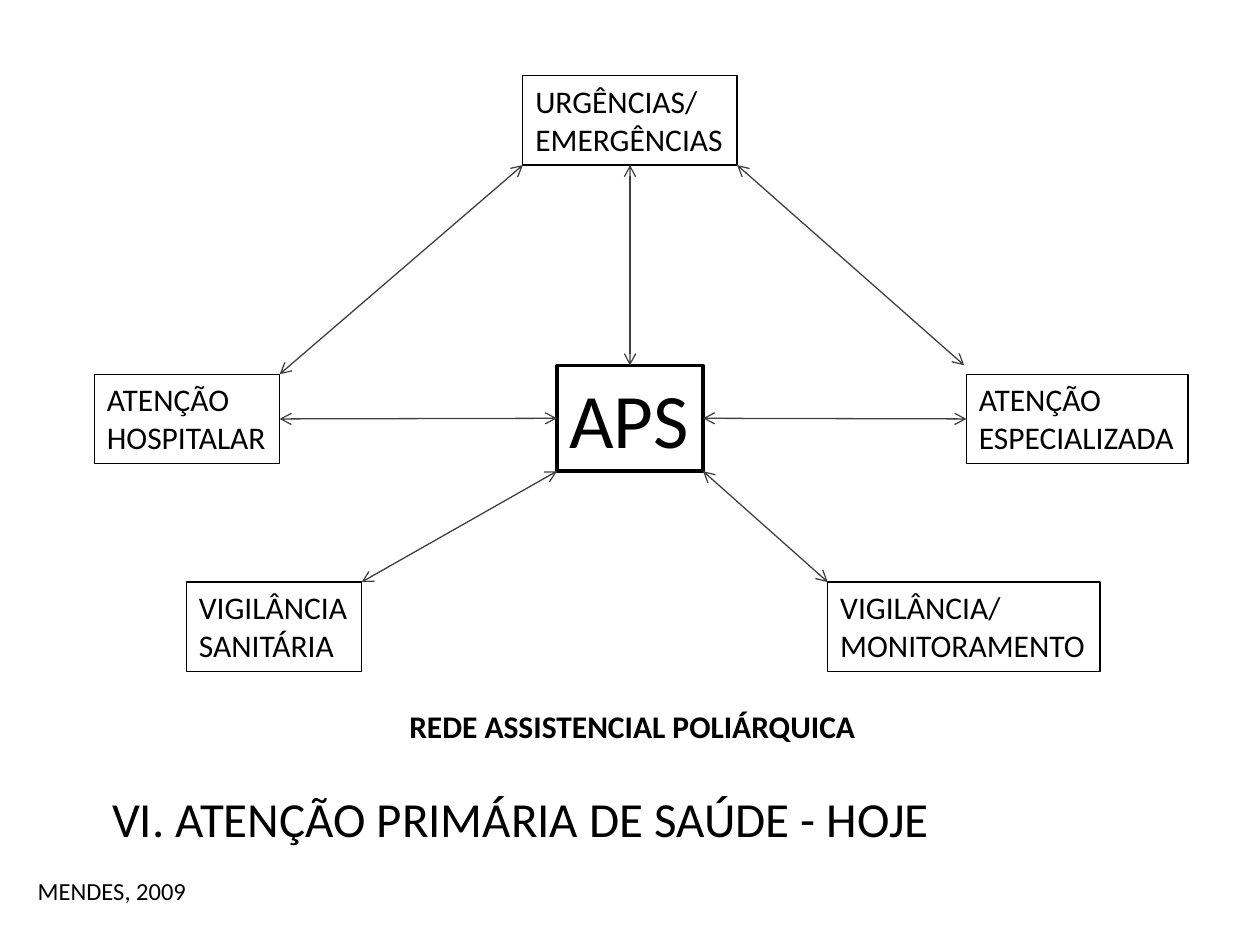
from dataclasses import dataclass

from lxml.etree import SubElement
from pptx import Presentation
from pptx.dml.color import RGBColor
from pptx.enum.shapes import MSO_CONNECTOR
from pptx.enum.text import MSO_ANCHOR, MSO_AUTO_SIZE, PP_ALIGN
from pptx.oxml.ns import qn
from pptx.util import Inches, Pt

COLS, ROWS = 100, 75


@dataclass(frozen=True)
class Theme:
    font: str = "Calibri"
    ink: RGBColor = RGBColor(0, 0, 0)
    paper: RGBColor = RGBColor(255, 255, 255)
    arrow: RGBColor = RGBColor(0x40, 0x40, 0x40)
    hub: int = 44
    title: int = 28
    body: int = 18
    source: int = 14
    thin: float = 0.75
    thick: float = 2


THEME = Theme()
SERVICE_H = 7.1
SIDE_ROW, WATCH_ROW = 29.7, 46.2

SERVICES = {
    "urgencias": ("URGÊNCIAS/\nEMERGÊNCIAS", 41.5, 6, 17),
    "hospitalar": ("ATENÇÃO\nHOSPITALAR", 7.5, SIDE_ROW, 14.7),
    "especializada": ("ATENÇÃO\nESPECIALIZADA", 76.7, SIDE_ROW, 17.6),
    "monitoramento": ("VIGILÂNCIA/\nMONITORAMENTO", 65.7, WATCH_ROW, 21.6),
    "sanitaria": ("VIGILÂNCIA\nSANITÁRIA", 14.8, WATCH_ROW, 13.9),
}

TOP, BOTTOM, LEFT, RIGHT = (0.5, 0), (0.5, 1), (0, 0.5), (1, 0.5)
TOP_LEFT, TOP_RIGHT, BOTTOM_LEFT, BOTTOM_RIGHT = (0, 0), (1, 0), (0, 1), (1, 1)
NEAR_TOP_LEFT = (-0.01, -0.1)

LINKS = [
    ("urgencias", BOTTOM, "aps", TOP),
    ("hospitalar", RIGHT, "aps", LEFT),
    ("aps", RIGHT, "especializada", LEFT),
    ("sanitaria", TOP_RIGHT, "aps", BOTTOM_LEFT),
    ("aps", BOTTOM_RIGHT, "monitoramento", TOP_LEFT),
    ("urgencias", BOTTOM_RIGHT, "especializada", NEAR_TOP_LEFT),
    ("urgencias", BOTTOM_LEFT, "hospitalar", TOP_RIGHT),
]


def grid(prs, x, y):
    return round(prs.slide_width * x / COLS), round(prs.slide_height * y / ROWS)


def format_text(tf, text, size, bold=False):
    tf.text = text
    for p in tf.paragraphs:
        p.alignment = PP_ALIGN.LEFT
        for r in p.runs:
            r.font.name = THEME.font
            r.font.size = Pt(size)
            r.font.bold = bold
            r.font.color.rgb = THEME.ink


def add_label(prs, s, text, x, y, w, h, size, bold=False):
    sp = s.shapes.add_textbox(*grid(prs, x, y), *grid(prs, w, h))
    tf = sp.text_frame
    tf.word_wrap = False
    tf.auto_size = MSO_AUTO_SIZE.SHAPE_TO_FIT_TEXT
    format_text(tf, text, size, bold)
    return sp


def add_box(prs, s, text, x, y, w, h, size, line):
    sp = add_label(prs, s, text, x, y, w, h, size)
    sp.line.color.rgb = THEME.ink
    sp.line.width = Pt(line)
    return sp


def anchor(sp, share):
    return round(sp.left + sp.width * share[0]), round(sp.top + sp.height * share[1])


def add_link(s, start, end):
    cx = s.shapes.add_connector(MSO_CONNECTOR.STRAIGHT, *start, *end)
    cx.line.color.rgb = THEME.arrow
    cx.line.width = Pt(THEME.thin)
    ln = cx.line._get_or_add_ln()
    for tag in ("a:headEnd", "a:tailEnd"):
        SubElement(ln, qn(tag), type="arrow")
    SubElement(cx._element.spPr, qn("a:effectLst"))


def place_title(prs, s, text, x, y, w, h):
    sp = s.shapes.title
    sp.left, sp.top = grid(prs, x, y)
    sp.width, sp.height = grid(prs, w, h)
    tf = sp.text_frame
    tf.vertical_anchor = MSO_ANCHOR.MIDDLE
    format_text(tf, text, THEME.title)


def main():
    prs = Presentation()
    prs.slide_width, prs.slide_height = Inches(10), Inches(7.5)
    s = prs.slides.add_slide(prs.slide_layouts[5])

    hub = add_box(prs, s, "APS", 44.2, 29, 11.6, 8.4, THEME.hub, THEME.thick)
    hub.fill.solid()
    hub.fill.fore_color.rgb = THEME.paper
    boxes = {"aps": hub}
    for name, (text, x, y, w) in SERVICES.items():
        boxes[name] = add_box(prs, s, text, x, y, w, SERVICE_H, THEME.body, THEME.thin)
    for a, a_share, b, b_share in LINKS:
        add_link(s, anchor(boxes[a], a_share), anchor(boxes[b], b_share))

    add_label(prs, s, "REDE ASSISTENCIAL POLIÁRQUICA", 31.5, 55.6, 37.7, 4, THEME.body, True)
    add_label(prs, s, "MENDES, 2009", 2, 69, 13.9, 3.4, THEME.source)
    place_title(prs, s, "VI. ATENÇÃO PRIMÁRIA DE SAÚDE - HOJE", 7.9, 59.5, 87.2, 10.9)
    prs.save("out.pptx")


if __name__ == "__main__":
    main()
